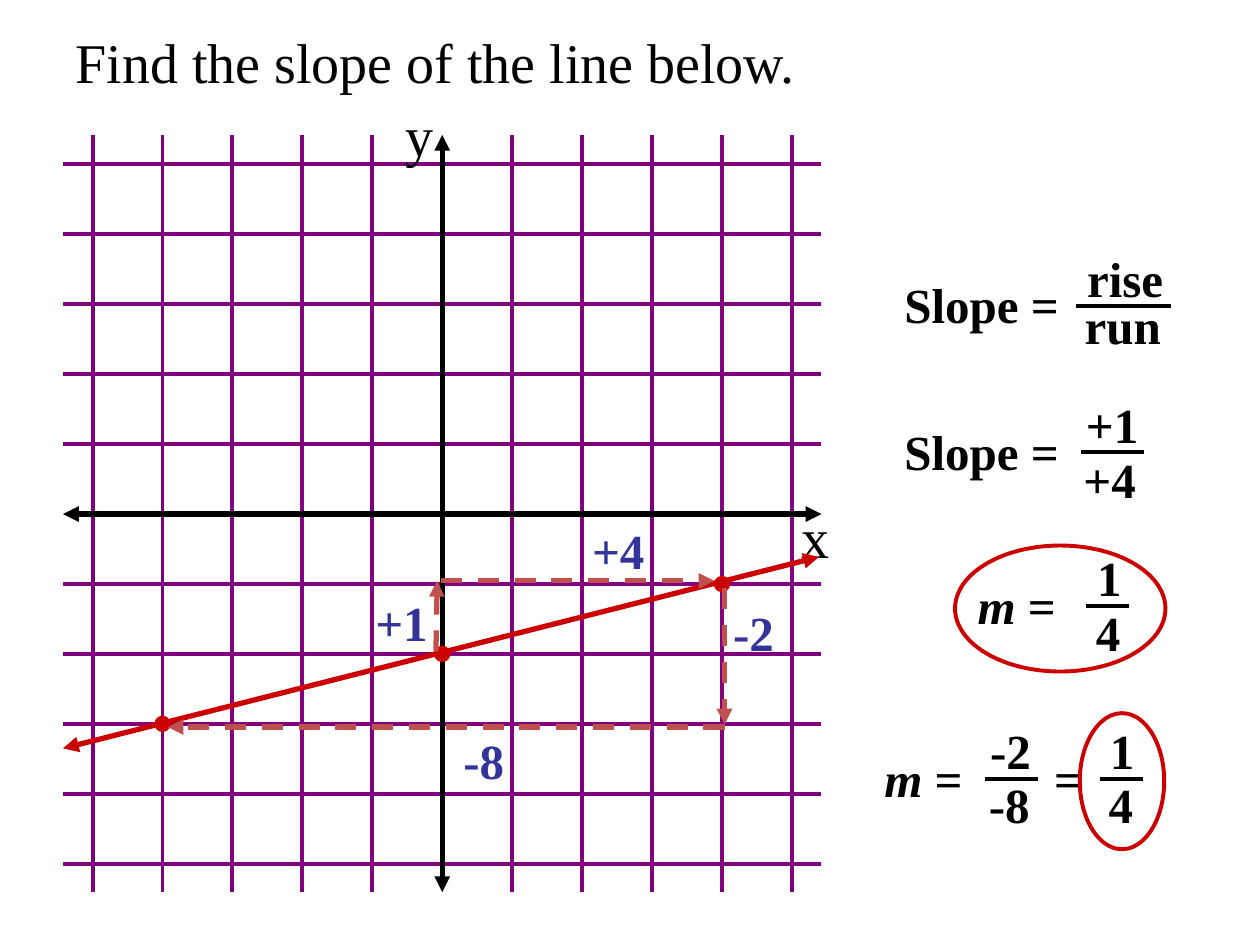
"""Build a slide that finds the slope of a line on a coordinate grid."""
from lxml import etree
from pptx import Presentation
from pptx import util as u
from pptx.dml.color import RGBColor
from pptx.enum import dml, shapes, text
from pptx.oxml.ns import qn

COLORS = {"ink": "000000", "grid": "800080", "red": "CC0000",
          "step": "C0504D", "label": "333399"}
FONT = "Times New Roman"
LEFT, RIGHT, TOP, BOTTOM = 0.5, 6.52, 1.07, 7.08
ORIGIN_X, ORIGIN_Y = 3.51, 4.08
UNIT = (6.85 - 1.3) / 10


def rgb(name):
    return RGBColor.from_string(COLORS[name])


def add_text(parent, words, x, y, w, h=0.57, size=28, color="ink", bold=True):
    tb = parent.add_textbox(*map(u.Inches, (x, y, w, h)))
    tf = tb.text_frame
    tf.word_wrap = False
    tf.auto_size = text.MSO_AUTO_SIZE.SHAPE_TO_FIT_TEXT
    p = tf.paragraphs[0]
    p.font.name, p.font.size, p.font.bold = FONT, u.Pt(size), bold
    p.font.color.rgb = rgb(color)
    p.add_run().text = words
    return p


def add_slope_symbol(parent, x, y):
    p = add_text(parent, "m", x, y, 0.85)
    p.runs[0].font.italic = True
    p.add_run().text = " ="


def add_line(parent, start, end, color="ink", width=2.25, arrows=(), dash=False):
    ln = parent.add_connector(shapes.MSO_CONNECTOR.STRAIGHT,
                              *map(u.Inches, (*start, *end)))
    ln.line.color.rgb = rgb(color)
    ln.line.width = u.Pt(width)
    if dash:
        ln.line.dash_style = dml.MSO_LINE.DASH
    sp_pr = ln._element.spPr
    for tag in arrows:
        etree.SubElement(sp_pr.find(qn("a:ln")), qn(f"a:{tag}"), type="triangle")
    etree.SubElement(sp_pr, qn("a:effectLst"))


def add_oval(parent, x, y, w, h, width=2.25, filled=False):
    sp = parent.add_shape(shapes.MSO_SHAPE.OVAL, *map(u.Inches, (x, y, w, h)))
    sp.shadow.inherit = False
    if filled:
        sp.fill.solid()
        sp.fill.fore_color.rgb = rgb("red")
    else:
        sp.fill.background()
    sp.line.color.rgb = rgb("red")
    sp.line.width = u.Pt(width)


def add_fraction(parent, top, bottom, x, y, w, bar, shift=0.01, drop=0.43):
    add_text(parent, top, x, y, w)
    add_text(parent, bottom, x - shift, y + drop, w)
    add_line(parent, (bar[0], y + 0.51), (bar[1], y + 0.51))


def add_grid(s):
    grid = s.add_group_shape().shapes
    for i in range(-5, 6):
        if i:
            x, y = ORIGIN_X + i * UNIT, ORIGIN_Y + i * UNIT
            add_line(grid, (LEFT, y), (RIGHT, y), "grid")
            add_line(grid, (x, TOP), (x, BOTTOM), "grid")
    both = ("headEnd", "tailEnd")
    add_line(grid, (ORIGIN_X, TOP), (ORIGIN_X, BOTTOM), width=3, arrows=both)
    add_line(grid, (LEFT, ORIGIN_Y), (RIGHT, ORIGIN_Y), width=3, arrows=both)
    add_text(grid, "x", 6.26, 3.94, 0.42, 0.63, 32, bold=False)
    add_text(grid, "y", 3.12, 0.75, 0.42, 0.63, 32, bold=False)


def add_graph(s):
    for col, row in ((0, 2), (4, 1), (-4, 3)):
        add_oval(s, ORIGIN_X + col * UNIT - 0.06, ORIGIN_Y + row * UNIT - 0.06,
                 0.12, 0.12, 0.75, filled=True)
    add_line(s, (0.5, 5.94), (6.5, 4.42), "red", 3, ("headEnd", "tailEnd"))


def add_steps(s):
    steps = (
        ((3.46, 5.17), (3.47, 4.61), "+1", 2.88, 4.65, 0.62),
        ((3.5, 4.61), (5.67, 4.61), "+4", 4.6, 4.08, 0.62),
        ((5.75, 4.67), (5.75, 5.75), "-2", 5.72, 4.73, 0.53),
        ((5.75, 5.77), (1.33, 5.77), "-8", 3.58, 5.75, 0.53),
    )
    for start, end, words, x, y, w in steps:
        add_line(s, start, end, "step", 3, ("tailEnd",), dash=True)
        add_text(s, words, x, y, w, color="label")


def add_working(s):
    rule = s.add_group_shape().shapes
    add_text(rule, "Slope =", 7.08, 2.13, 1.53)
    add_fraction(rule, "rise", "run", 8.53, 1.92, 0.81, (8.54, 9.29), 0.02, 0.38)

    add_text(s, "Slope =", 7.08, 3.3, 1.53)
    add_fraction(s, "+1", "+4", 8.52, 3.08, 0.62, (8.58, 9.08), 0.02, 0.44)

    answer = s.add_group_shape().shapes
    add_slope_symbol(answer, 7.66, 4.52)
    add_fraction(answer, "1", "4", 8.61, 4.3, 0.4, (8.62, 8.96))
    add_oval(s, 7.58, 4.33, 1.67, 1)

    add_slope_symbol(s, 6.92, 5.89)
    add_fraction(s, "-2", "-8", 7.76, 5.67, 0.53, (7.82, 8.24))
    check = s.add_group_shape().shapes
    add_text(check, " =", 8.17, 5.89, 0.52)
    add_fraction(check, "1", "4", 8.71, 5.67, 0.4, (8.73, 9.07))
    add_oval(s, 8.57, 5.66, 0.67, 1.08)


def main():
    prs = Presentation()
    prs.slide_width, prs.slide_height = u.Inches(10), u.Inches(7.5)
    s = prs.slides.add_slide(prs.slide_layouts[6]).shapes
    add_text(s, "Find the slope of the line below.", 0.5, 0.17, 5.94, 0.63, 32,
             bold=False)
    add_grid(s)
    add_graph(s)
    add_steps(s)
    add_working(s)
    prs.save("out.pptx")


if __name__ == "__main__":
    main()
